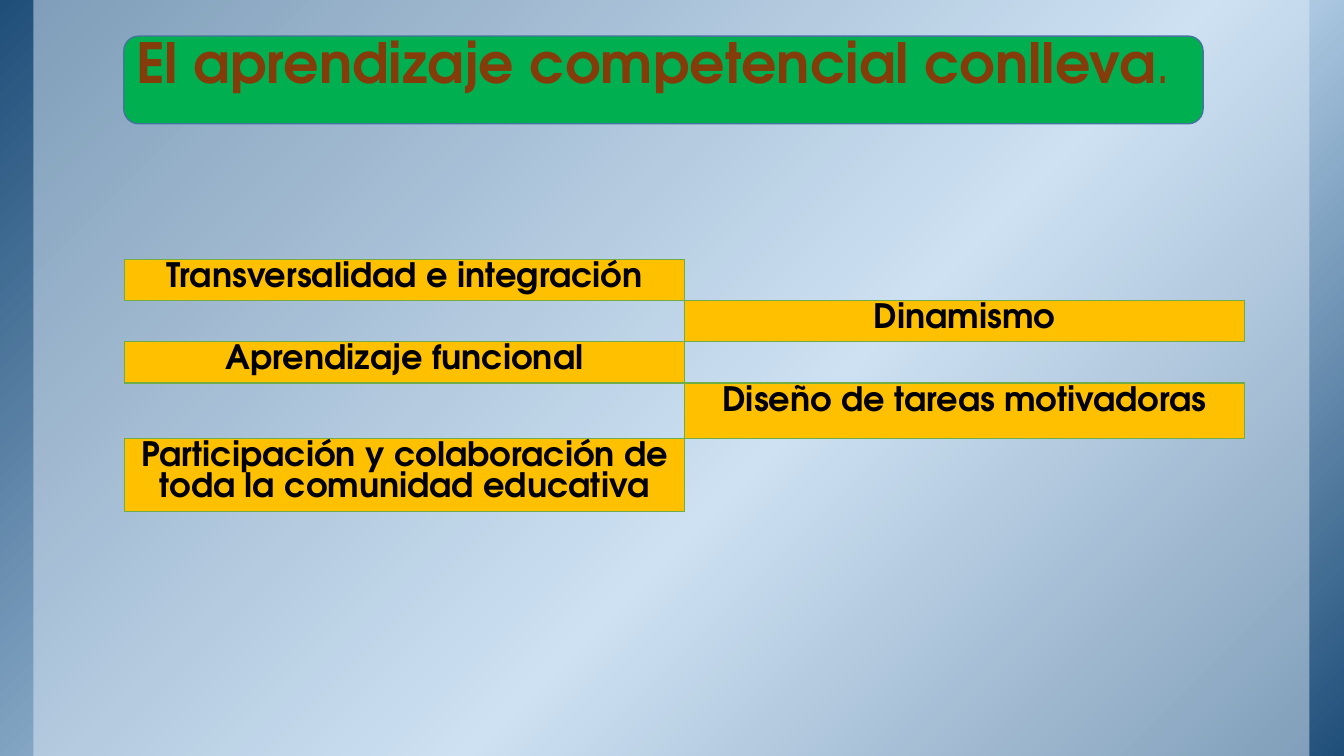
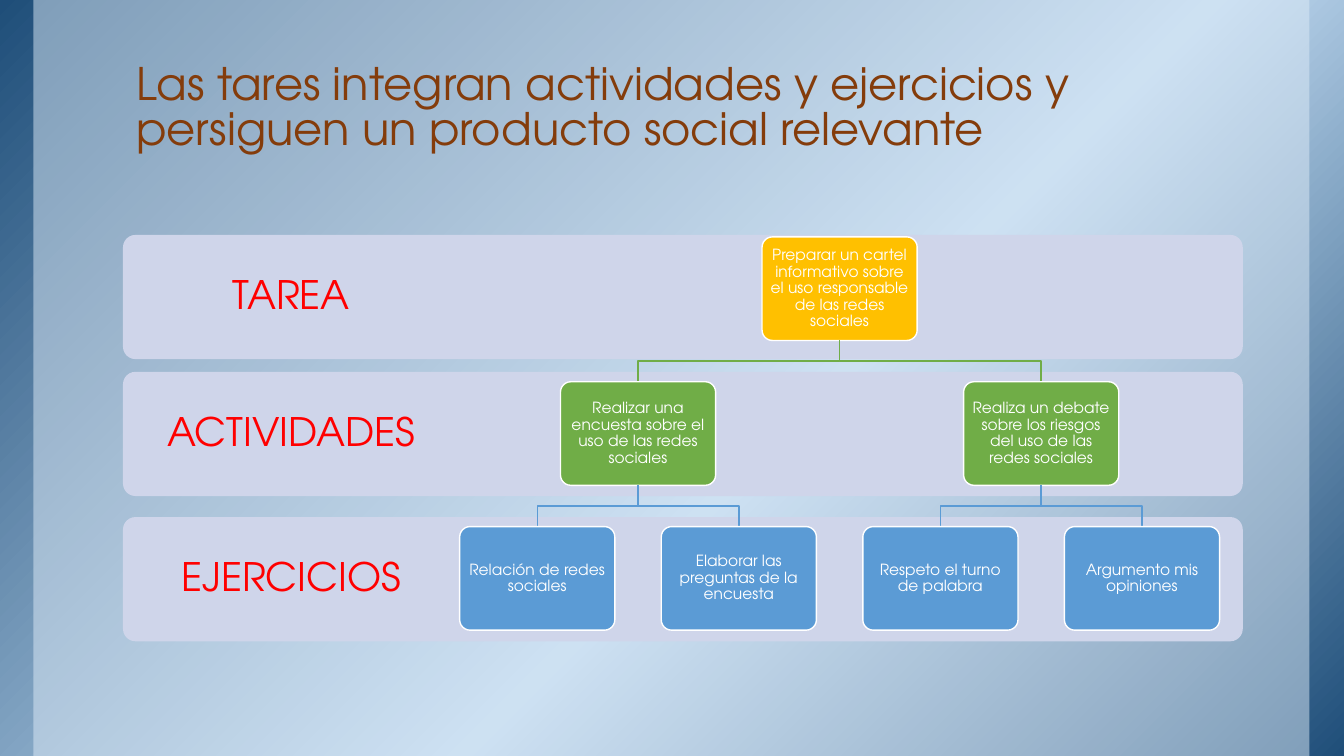
from lxml import etree
from pptx import Presentation
from pptx.dml.color import RGBColor
from pptx.enum import shapes, text
from pptx.oxml.ns import qn
from pptx.util import Cm, Pt

FONT = "TeX Gyre Adventor"
NAVY = RGBColor(0x1F, 0x4E, 0x79)
SKY = RGBColor(0xBD, 0xD7, 0xEE)
PALE = RGBColor(0xDE, 0xEB, 0xF7)
BROWN = RGBColor(0x84, 0x3C, 0x0B)
EMERALD = RGBColor(0x00, 0xB0, 0x50)
BANNER_EDGE = RGBColor(0x43, 0x73, 0x9E)
GOLD = RGBColor(0xFF, 0xC0, 0x00)
GREEN = RGBColor(0x70, 0xAD, 0x47)
BLUE = RGBColor(0x5B, 0x9B, 0xD5)
LAVENDER = RGBColor(0xCF, 0xD5, 0xEA)
RED = RGBColor(0xFF, 0x00, 0x00)
BLACK = RGBColor(0x00, 0x00, 0x00)
WHITE = RGBColor(0xFF, 0xFF, 0xFF)

SLIDE_W, SLIDE_H = 33.87, 19.05
LEFT, WIDTH = 3.1, 28.22
NODE_W, NODE_H, NODE_PITCH = 3.91, 2.61, 5.08
FIRST_LEAF, ROOT_TOP, LEVEL_PITCH = 13.54, 5.97, 3.65
NO_TABLE_STYLE = "{2D5ABB26-0587-4C30-8999-92F81FD0307C}"

QUALITIES = [
    "Transversalidad e integración",
    "Dinamismo",
    "Aprendizaje funcional",
    "Diseño de tareas motivadoras",
    "Participación y colaboración de toda la comunidad educativa",
]
QUALITY_HEIGHTS = [1.04, 1.04, 1.04, 1.4, 1.85]
BANDS = [("TAREA", 5.92), ("ACTIVIDADES", 9.37), ("EJERCICIOS", 13.03)]
LEVELS = [
    (GOLD, ["Preparar un cartel informativo sobre el uso responsable de las redes sociales"]),
    (GREEN, ["Realizar una encuesta sobre el uso de las redes sociales",
             "Realiza un debate sobre los riesgos del uso de las redes sociales"]),
    (BLUE, ["Relación de redes sociales", "Elaborar las preguntas de la encuesta",
            "Respeto el turno de palabra", "Argumento mis opiniones"]),
]


def add_run(paragraph, words, size, color, bold=False):
    """Append one formatted run."""
    run = paragraph.add_run()
    run.text = words
    run.font.name, run.font.size, run.font.bold = FONT, Pt(size), bold
    run.font.color.rgb = color


def set_frame(frame, inset_x, inset_y, anchor):
    """Set wrapping, insets and anchor of a text frame."""
    frame.word_wrap = True
    frame.auto_size = text.MSO_AUTO_SIZE.NONE
    frame.margin_left = frame.margin_right = Cm(inset_x)
    frame.margin_top = frame.margin_bottom = Cm(inset_y)
    frame.vertical_anchor = anchor


def write_centered(frame, words, size, color, inset):
    """Write one paragraph in the middle of a frame."""
    set_frame(frame, inset, inset, text.MSO_ANCHOR.MIDDLE)
    paragraph = frame.paragraphs[0]
    paragraph.alignment = text.PP_ALIGN.CENTER
    paragraph.line_spacing = 0.9
    add_run(paragraph, words, size, color)


def add_panel(slide, box, fill, edge=None, rounding=None):
    """Add a filled rectangle, rounded when a rounding is given."""
    kind = shapes.MSO_SHAPE.ROUNDED_RECTANGLE if rounding else shapes.MSO_SHAPE.RECTANGLE
    panel = slide.shapes.add_shape(kind, *map(Cm, box))
    panel.shadow.inherit = False
    panel.fill.solid()
    panel.fill.fore_color.rgb = fill
    if rounding:
        panel.adjustments[0] = rounding
    if edge is None:
        panel.line.fill.background()
    else:
        panel.line.color.rgb = edge
        panel.line.width = Pt(1)
    return panel


def add_backdrop(master, slide):
    """Give the master a gradient ground and a translucent sheet."""
    ground = add_panel(slide, (0, 0, SLIDE_W, SLIDE_H), NAVY)
    ground.fill.gradient()
    ground.fill.gradient_angle = 315
    stops = ground._element.spPr.find(".//" + qn("a:gsLst"))
    for stop in list(stops):
        stops.remove(stop)
    for percent, color in ((0, NAVY), (58, SKY), (100, NAVY)):
        stop = etree.SubElement(stops, qn("a:gs"), pos=str(percent * 1000))
        etree.SubElement(stop, qn("a:srgbClr"), val=str(color))
    sheet = add_panel(slide, (0.84, 0, 32.16, SLIDE_H), PALE)
    tint = sheet._element.spPr.find(".//" + qn("a:srgbClr"))
    etree.SubElement(tint, qn("a:alpha"), val="50000")
    for index, panel in enumerate((ground, sheet)):
        master.shapes._spTree.insert(2 + index, panel._element)


def set_title(slide, top, height, size, *pieces):
    """Place the title and write its (words, bold) pieces."""
    title = slide.shapes.title
    title.left, title.top, title.width, title.height = map(Cm, (LEFT, top, WIDTH, height))
    set_frame(title.text_frame, 0.33, 0.18, text.MSO_ANCHOR.BOTTOM)
    paragraph = title.text_frame.paragraphs[0]
    paragraph.alignment = text.PP_ALIGN.LEFT
    paragraph.line_spacing = 0.85
    for words, bold in pieces:
        add_run(paragraph, words, size, BROWN, bold)


def set_borders(cell, sides):
    """Draw thin green borders on the given sides of a cell."""
    properties = cell._tc.get_or_add_tcPr()
    for index, side in enumerate(sides):
        line = etree.Element(qn("a:ln" + side), w=str(Pt(1)))
        fill = etree.SubElement(line, qn("a:solidFill"))
        etree.SubElement(fill, qn("a:srgbClr"), val=str(GREEN))
        properties.insert(index, line)


def add_quality_table(slide):
    """Add the two-column table whose filled cells alternate sides."""
    last = len(QUALITIES) - 1
    box = (3.14, 6.53, WIDTH, sum(QUALITY_HEIGHTS))
    table = slide.shapes.add_table(len(QUALITIES), 2, *map(Cm, box)).table
    table.first_row = table.horz_banding = False
    table._tbl.tblPr.find(qn("a:tableStyleId")).text = NO_TABLE_STYLE
    for row, (quality, height) in enumerate(zip(QUALITIES, QUALITY_HEIGHTS)):
        table.rows[row].height = Cm(height)
        for column in range(2):
            cell = table.cell(row, column)
            cell.margin_top = cell.margin_bottom = Cm(0.08)
            filled = column == row % 2
            paragraph = cell.text_frame.paragraphs[0]
            if filled:
                cell.fill.solid()
                cell.fill.fore_color.rgb = GOLD
                paragraph.alignment = text.PP_ALIGN.CENTER
                paragraph.line_spacing = 1.0
                add_run(paragraph, quality, 24, BLACK, True)
            else:
                cell.fill.background()
                paragraph.font.size = Pt(12)
            inner = {"L": column > 0, "R": column < 1, "T": row > 0, "B": row < last}
            set_borders(cell, [side for side in "LRTB" if filled or inner[side]])


def add_band(slide, label, top):
    """Add a level band with its label on the left."""
    add_panel(slide, (LEFT, top, WIDTH, 3.13), LAVENDER, rounding=0.1)
    caption = slide.shapes.add_textbox(*map(Cm, (LEFT, top, 8.47, 3.13)))
    write_centered(caption.text_frame, label, 28, RED, 0.56)


def node_center(level, index):
    """Return the horizontal centre of a node in the binary tree."""
    leaves = len(LEVELS[-1][1])
    return FIRST_LEAF + NODE_PITCH * ((index + 0.5) * leaves / 2 ** level - 0.5)


def add_branch(slide, start_x, end_x, end_y, color):
    """Add the elbow line from a parent node down to its child."""
    gap = LEVEL_PITCH - NODE_H
    start_y, middle_y = end_y - gap, end_y - gap / 2
    builder = slide.shapes.build_freeform(Cm(start_x), Cm(start_y))
    corners = ((start_x, middle_y), (end_x, middle_y), (end_x, end_y))
    builder.add_line_segments([(Cm(x), Cm(y)) for x, y in corners], close=False)
    branch = builder.convert_to_shape()
    branch.shadow.inherit = False
    branch.fill.background()
    branch.line.color.rgb = color
    branch.line.width = Pt(1)


def add_tree(slide):
    """Add the task tree, one level of nodes per band."""
    for level, (color, labels) in enumerate(LEVELS):
        top = ROOT_TOP + level * LEVEL_PITCH
        for index, label in enumerate(labels):
            center = node_center(level, index)
            if level:
                add_branch(slide, node_center(level - 1, index // 2), center, top, color)
            box = (center - NODE_W / 2, top, NODE_W, NODE_H)
            node = add_panel(slide, box, color, WHITE, 0.1)
            write_centered(node.text_frame, label, 11, WHITE, 0.11)


def build_learning_slide(slide):
    """Build the slide on what competence learning involves."""
    banner = add_panel(slide, (3.12, 0.91, 27.2, 2.21), EMERALD, BANNER_EDGE, 0.17)
    slide.shapes._spTree.insert(2, banner._element)
    set_title(slide, 0.66, 1.9, 39.6,
              ("El aprendizaje competencial conlleva", True), (".", False))
    add_quality_table(slide)


def build_task_slide(slide):
    """Build the slide on tasks, activities and exercises."""
    set_title(slide, 0.2, 3.89, 32,
              ("Las tares integran actividades y ejercicios y "
               "persiguen un producto social relevante", False))
    for label, top in BANDS:
        add_band(slide, label, top)
    add_tree(slide)


def main():
    """Build and save the presentation."""
    deck = Presentation()
    deck.slide_width, deck.slide_height = Cm(SLIDE_W), Cm(SLIDE_H)
    title_only = deck.slide_layouts[5]
    learning, task = (deck.slides.add_slide(title_only) for _ in range(2))
    add_backdrop(deck.slide_master, learning)
    build_learning_slide(learning)
    build_task_slide(task)
    deck.save("out.pptx")


if __name__ == "__main__":
    main()
